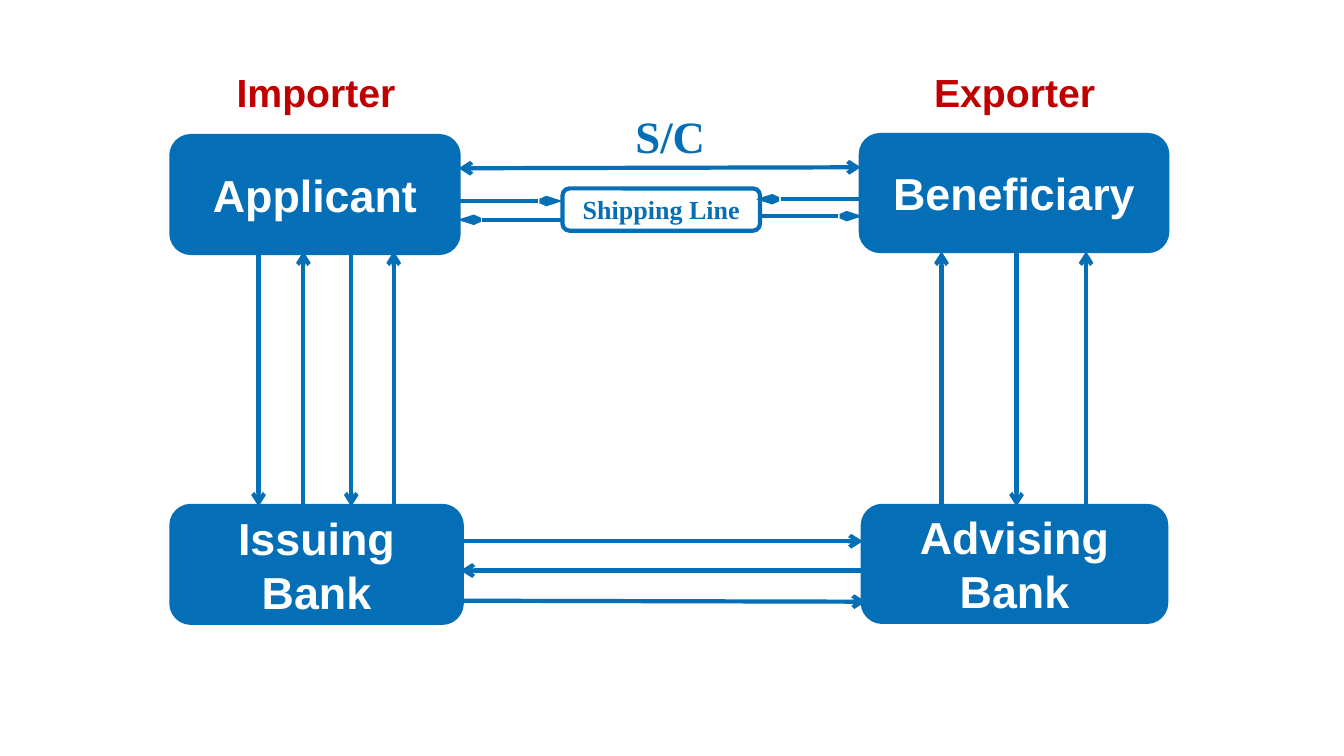
from dataclasses import dataclass

import pptx
import pptx.dml.color
import pptx.enum.shapes
import pptx.enum.text
import pptx.oxml.ns
import pptx.presentation
import pptx.slide
import pptx.util
from lxml import etree

Pt = pptx.util.Pt
Shape = pptx.enum.shapes.MSO_SHAPE
BLUE = pptx.dml.color.RGBColor(0x04, 0x6F, 0xB6)
RED = pptx.dml.color.RGBColor(0xC0, 0x00, 0x00)
WHITE = pptx.dml.color.RGBColor(0xFF, 0xFF, 0xFF)
LINE_WIDTH = Pt(3)


@dataclass(frozen=True)
class Label:
    text: str
    left: float
    top: float
    width: float
    height: float
    size: float
    color: pptx.dml.color.RGBColor
    font: str = "Arial"


@dataclass(frozen=True)
class Node(Label):
    outline: Shape = Shape.FLOWCHART_ALTERNATE_PROCESS
    filled: bool = True


@dataclass(frozen=True)
class Arrow:
    x1: float
    y1: float
    x2: float
    y2: float
    both_ends: bool = False
    head_width: str = "med"
    head_length: str = "med"


# Captions and parties
LABELS = [
    Label("S/C", 403.2, 74.2, 151.2, 46, 32, BLUE, "Times New Roman"),
    Label("Importer", 137.5, 45.4, 176.4, 41, 28, RED),
    Label("Exporter", 636.5, 45.4, 176.4, 41, 28, RED),
]
NODES = [
    Node("Applicant", 122.4, 97.2, 205.2, 83.5, 32, WHITE),
    Node("Beneficiary", 614.9, 96.5, 218.9, 82.8, 32, WHITE),
    Node("Issuing Bank", 122.4, 361.4, 207.4, 83.5, 32, WHITE),
    Node("Advising Bank", 616.3, 361.4, 216.7, 82.8, 32, WHITE),
    Node("Shipping Line", 401.8, 134.6, 141.1, 30.2, 18.6, BLUE,
         "Times New Roman", Shape.ROUNDED_RECTANGLE, False),
]

# Arrows between parties and banks: x positions by direction
PARTY_BOTTOM, BANK_TOP = 179.6, 361.8
DOWN_X = [184.7, 250.9, 726.1]
UP_X = [216.7, 281.2, 672.5, 775.8]
ARROWS = [
    Arrow(327.6, 120.2, 614.9, 119.5, both_ends=True),
    Arrow(329, 386.6, 616.3, 386.6),
    Arrow(616.3, 407.5, 329, 407.5),
    Arrow(331.2, 429.1, 618.5, 429.8),
    *(Arrow(x, PARTY_BOTTOM, x, BANK_TOP) for x in DOWN_X),
    *(Arrow(x, BANK_TOP, x, PARTY_BOTTOM) for x in UP_X),
]

# Short arrows to and from the shipping line: start, end, height
SHIPPING = [
    (327.6, 401.8, 143.6),
    (402.5, 326.9, 157),
    (542.9, 616.3, 154.4),
    (615.6, 540, 142.3),
]
ARROWS += [Arrow(start, y, end, y, head_width="sm", head_length="lg")
           for start, end, y in SHIPPING]


def write_text(frame: pptx.text.text.TextFrame, label: Label) -> None:
    frame.word_wrap = True
    frame.text = label.text
    para = frame.paragraphs[0]
    para.alignment = pptx.enum.text.PP_ALIGN.CENTER
    font = para.runs[0].font
    font.name, font.size, font.bold = label.font, Pt(label.size), True
    font.color.rgb = label.color


def add_label(page: pptx.slide.Slide, label: Label) -> None:
    box = page.shapes.add_textbox(
        Pt(label.left), Pt(label.top), Pt(label.width), Pt(label.height))
    write_text(box.text_frame, label)


def add_node(page: pptx.slide.Slide, node: Node) -> None:
    box = page.shapes.add_shape(
        node.outline, Pt(node.left), Pt(node.top), Pt(node.width), Pt(node.height))
    box.shadow.inherit = False
    if node.filled:
        box.fill.solid()
        box.fill.fore_color.rgb = BLUE
    else:
        box.fill.background()
    box.line.color.rgb = BLUE
    box.line.width = LINE_WIDTH
    box.text_frame.vertical_anchor = pptx.enum.text.MSO_ANCHOR.MIDDLE
    write_text(box.text_frame, node)


def add_arrow(page: pptx.slide.Slide, arrow: Arrow) -> None:
    line = page.shapes.add_connector(
        pptx.enum.shapes.MSO_CONNECTOR.STRAIGHT,
        Pt(arrow.x1), Pt(arrow.y1), Pt(arrow.x2), Pt(arrow.y2))
    line.line.color.rgb = BLUE
    line.line.width = LINE_WIDTH
    properties = line.element.spPr
    stroke = properties.find(pptx.oxml.ns.qn("a:ln"))
    for end in ["a:headEnd", "a:tailEnd"] if arrow.both_ends else ["a:tailEnd"]:
        etree.SubElement(stroke, pptx.oxml.ns.qn(end), type="arrow",
                         w=arrow.head_width, len=arrow.head_length)
    etree.SubElement(properties, pptx.oxml.ns.qn("a:effectLst"))


def main() -> None:
    deck = pptx.Presentation()
    deck.slide_width, deck.slide_height = Pt(960), Pt(540)
    page = deck.slides.add_slide(deck.slide_layouts[6])
    for label in LABELS:
        add_label(page, label)
    for node in NODES:
        add_node(page, node)
    for arrow in ARROWS:
        add_arrow(page, arrow)
    deck.save("out.pptx")


if __name__ == "__main__":
    main()
